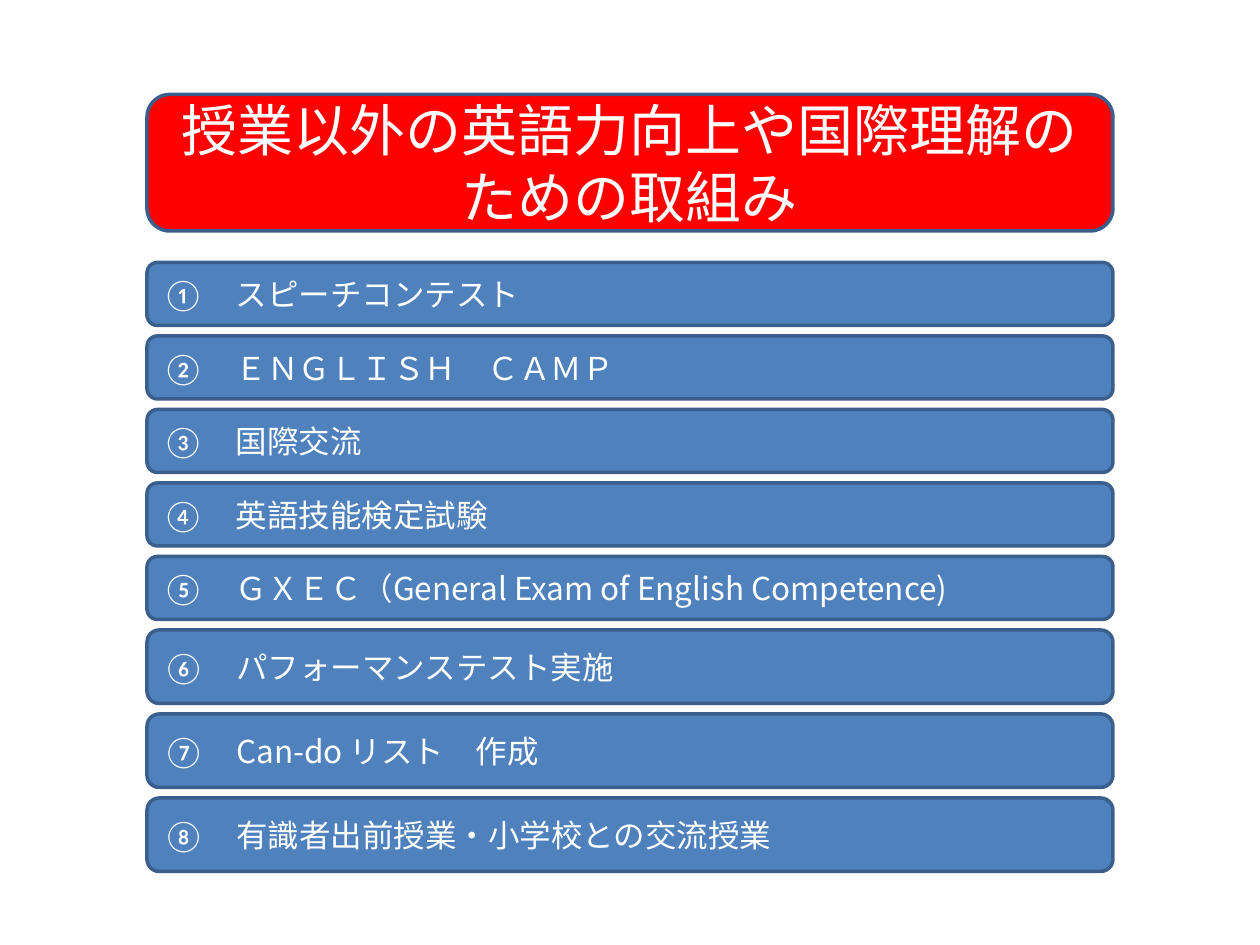
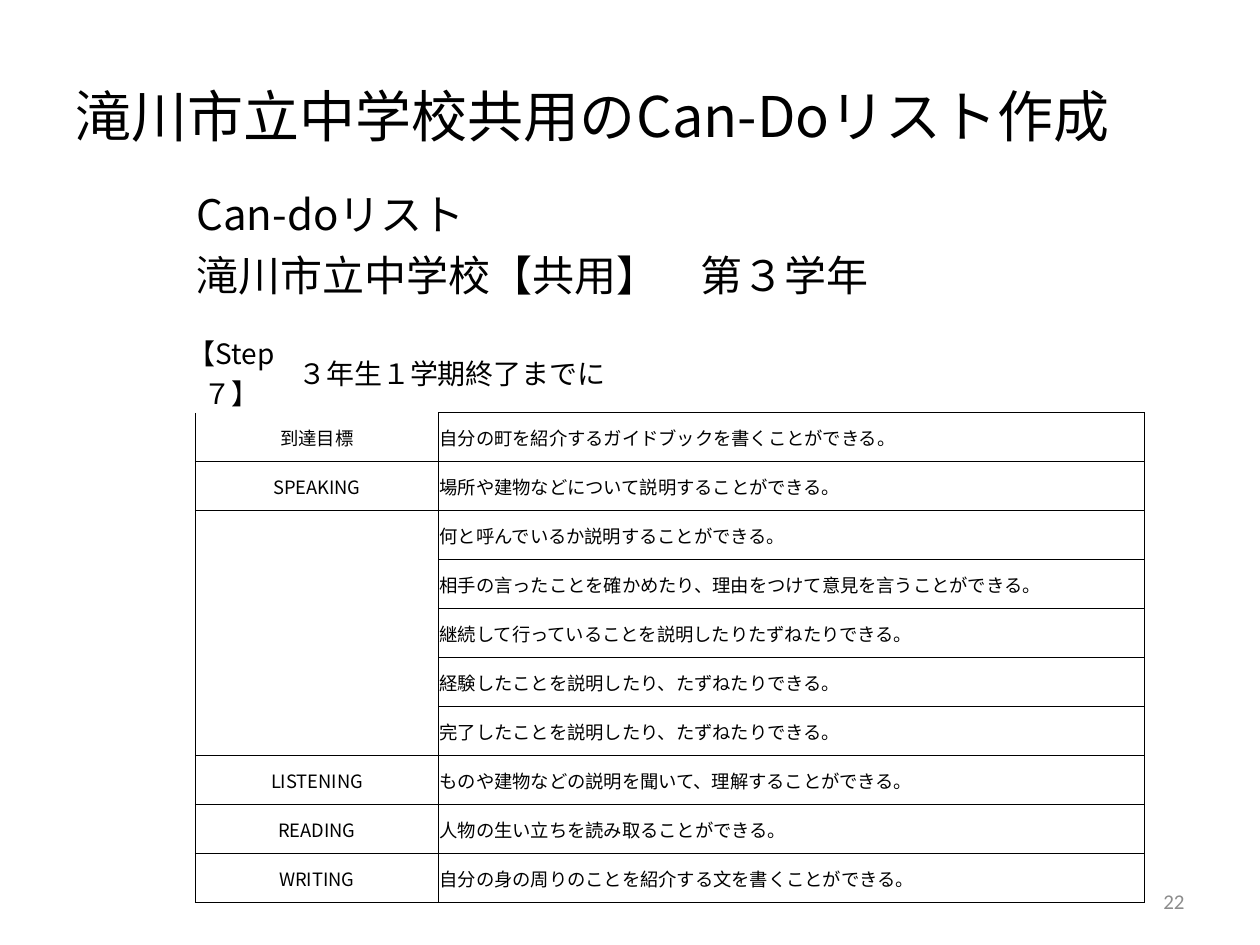
from dataclasses import dataclass

import pptx
import pptx.dml.color
import pptx.enum.shapes
import pptx.enum.text
import pptx.oxml
import pptx.oxml.ns
import pptx.util

Pt = pptx.util.Pt
ALIGN = pptx.enum.text.PP_ALIGN
ANCHOR = pptx.enum.text.MSO_ANCHOR


@dataclass(frozen=True)
class Theme:
    white: str = "FFFFFF"
    black: str = "000000"
    red: str = "FF0000"
    blue: str = "4F81BD"
    outline: str = "3A5F8C"
    gray: str = "8C8C8C"
    latin: str = "Calibri"
    japanese: str = "Noto Sans CJK JP"
    title_size: float = 32
    heading_size: float = 24
    item_size: float = 18
    step_size: float = 16
    number_size: float = 12
    cell_size: float = 10.5
    empty_size: float = 8


THEME = Theme()
NO_STYLE_NO_GRID = "{2D5ABB26-0587-4C30-8999-92F81FD0307C}"

ACTIVITIES = [
    "スピーチコンテスト",
    "ＥＮＧＬＩＳＨ　ＣＡＭＰ",
    "国際交流",
    "英語技能検定試験",
    "ＧＸＥＣ（General Exam of English Competence)",
    "パフォーマンステスト実施",
    "Can-do リスト　作成",
    "有識者出前授業・小学校との交流授業",
]

GOALS = [
    ("到達目標", ["自分の町を紹介するガイドブックを書くことができる。"]),
    ("SPEAKING", [
        "場所や建物などについて説明することができる。",
        "何と呼んでいるか説明することができる。",
        "相手の言ったことを確かめたり、理由をつけて意見を言うことができる。",
        "継続して行っていることを説明したりたずねたりできる。",
        "経験したことを説明したり、たずねたりできる。",
        "完了したことを説明したり、たずねたりできる。",
    ]),
    ("LISTENING", ["ものや建物などの説明を聞いて、理解することができる。"]),
    ("READING", ["人物の生い立ちを読み取ることができる。"]),
    ("WRITING", ["自分の身の周りのことを紹介する文を書くことができる。"]),
]


def rgb(color):
    return pptx.dml.color.RGBColor.from_string(color)


def write(para, text, size, font=THEME.japanese, color=THEME.black, align=ALIGN.LEFT):
    """Append one formatted span, with its font set for Latin and East Asian text."""
    para.alignment = align
    span = para.add_run()
    span.text = text
    span.font.size = Pt(size)
    span.font.color.rgb = rgb(color)
    span.font.name = font
    latin = span.font._element.find(pptx.oxml.ns.qn("a:latin"))
    latin.addnext(pptx.oxml.parse_xml(
        f'<a:ea {pptx.oxml.ns.nsdecls("a")} typeface="{font}"/>'))


def add_band(slide, top, height, fill):
    """Add a rounded band and return its empty paragraph."""
    band = slide.shapes.add_shape(
        pptx.enum.shapes.MSO_SHAPE.ROUNDED_RECTANGLE, Pt(84), Pt(top), Pt(552), Pt(height))
    band.shadow.inherit = False
    band.fill.solid()
    band.fill.fore_color.rgb = rgb(fill)
    band.line.color.rgb = rgb(THEME.outline)
    band.line.width = Pt(2)
    band.text_frame.word_wrap = True
    band.text_frame.vertical_anchor = ANCHOR.MIDDLE
    return band.text_frame.paragraphs[0]


def add_title(slide, text):
    title = slide.shapes.title
    title.left, title.top, title.width, title.height = Pt(36), Pt(24), Pt(636), Pt(84)
    title.text_frame.auto_size = pptx.enum.text.MSO_AUTO_SIZE.NONE
    title.text_frame.vertical_anchor = ANCHOR.MIDDLE
    write(title.text_frame.paragraphs[0], text, THEME.title_size)


def add_page_number(slide, number):
    box = slide.shapes.add_textbox(Pt(516), Pt(500.5), Pt(168), Pt(28.75))
    box.text_frame.word_wrap = True
    box.text_frame.vertical_anchor = ANCHOR.MIDDLE
    write(box.text_frame.paragraphs[0], number, THEME.number_size,
          font=THEME.latin, color=THEME.gray, align=ALIGN.RIGHT)


def add_plain_table(slide, left, top, widths, heights):
    """Add a table with no style, fill or borders and with narrow margins."""
    frame = slide.shapes.add_table(len(heights), len(widths), Pt(left), Pt(top),
                                   Pt(sum(widths)), Pt(sum(heights)))
    table = frame.table
    table.first_row = table.horz_banding = False
    table._tbl.tblPr.find(pptx.oxml.ns.qn("a:tableStyleId")).text = NO_STYLE_NO_GRID
    for column, width in zip(table.columns, widths):
        column.width = Pt(width)
    for row, height in zip(table.rows, heights):
        row.height = Pt(height)
    for cell in table.iter_cells():
        cell.margin_left = cell.margin_top = cell.margin_right = Pt(0.7)
        cell.margin_bottom = 0
        cell.vertical_anchor = ANCHOR.MIDDLE
        cell.fill.background()
        end = cell.text_frame.paragraphs[0]._p.get_or_add_endParaRPr()
        end.set("sz", str(int(THEME.empty_size * 100)))
    return table


def add_borders(cell, sides):
    """Draw thin lines on sides, given as letters in the order L, R, T, B."""
    properties = cell._tc.get_or_add_tcPr()
    for side in sides:
        line = pptx.oxml.parse_xml(
            f'<a:ln{side} {pptx.oxml.ns.nsdecls("a")} w="{Pt(0.5)}"><a:solidFill>'
            f'<a:srgbClr val="{THEME.black}"/></a:solidFill></a:ln{side}>')
        properties.insert(len(properties) - 1, line)


def fill_span(table, row, first, last, lines=(), size=THEME.cell_size,
              align=ALIGN.LEFT, sides=""):
    """Merge the columns first to last of a row, write lines and frame the result."""
    origin = table.cell(row, first)
    origin.merge(table.cell(row, last))
    for index, text in enumerate(lines):
        frame = origin.text_frame
        para = frame.add_paragraph() if index else frame.paragraphs[0]
        write(para, text, size, align=align)
    for column in range(first, last + 1):
        hidden = {first: "", last: "L"}.get(column, "LR")
        add_borders(table.cell(row, column), [side for side in sides if side not in hidden])


def add_goal_table(slide):
    goal_count = sum(len(goals) for _, goals in GOALS)
    widths = [40.35, 17.3, 58.3] + [40.35] * 12
    heights = [53.3, 15.8, 45.4] + [28] * goal_count
    table = add_plain_table(slide, 54, 103, widths, heights)

    fill_span(table, 0, 2, 11, ["Can-doリスト　", "滝川市立中学校【共用】　第３学年"],
              THEME.heading_size)
    fill_span(table, 2, 1, 2, ["【Step ７】"], THEME.step_size, ALIGN.CENTER)
    fill_span(table, 2, 3, 7, ["３年生１学期終了までに"], THEME.step_size)
    for column in range(5, 15):
        add_borders(table.cell(2, column), "B")

    row = 3
    for skill, goals in GOALS:
        for index, goal in enumerate(goals):
            sides = "LR"
            if index == 0 and row > 3:
                sides += "T"
            if index == len(goals) - 1:
                sides += "B"
            label = [skill] if index == 0 else []
            add_borders(table.cell(row, 1), "R")
            fill_span(table, row, 2, 4, label, align=ALIGN.CENTER, sides=sides)
            fill_span(table, row, 5, 14, [goal], sides="LRTB")
            row += 1


def build_activities(slide):
    heading = add_band(slide, 54, 78, THEME.red)
    write(heading, "授業以外の英語力向上や国際理解のための取組み", THEME.title_size,
          color=THEME.white, align=ALIGN.CENTER)
    top, gap = 150, 6
    for index, activity in enumerate(ACTIVITIES):
        height = 36 if index < 5 else 42
        para = add_band(slide, top, height, THEME.blue)
        write(para, chr(ord("①") + index) + "　", THEME.item_size,
              font=THEME.latin, color=THEME.white)
        write(para, activity, THEME.item_size, color=THEME.white)
        top += height + gap


def build_can_do_list(slide):
    add_title(slide, "滝川市立中学校共用のCan-Doリスト作成")
    add_goal_table(slide)
    add_page_number(slide, "22")


def main():
    deck = pptx.Presentation()
    deck.slide_width, deck.slide_height = Pt(720), Pt(540)
    title_only, blank = deck.slide_layouts[5], deck.slide_layouts[6]
    build_activities(deck.slides.add_slide(blank))
    build_can_do_list(deck.slides.add_slide(title_only))
    deck.save("out.pptx")


if __name__ == "__main__":
    main()
